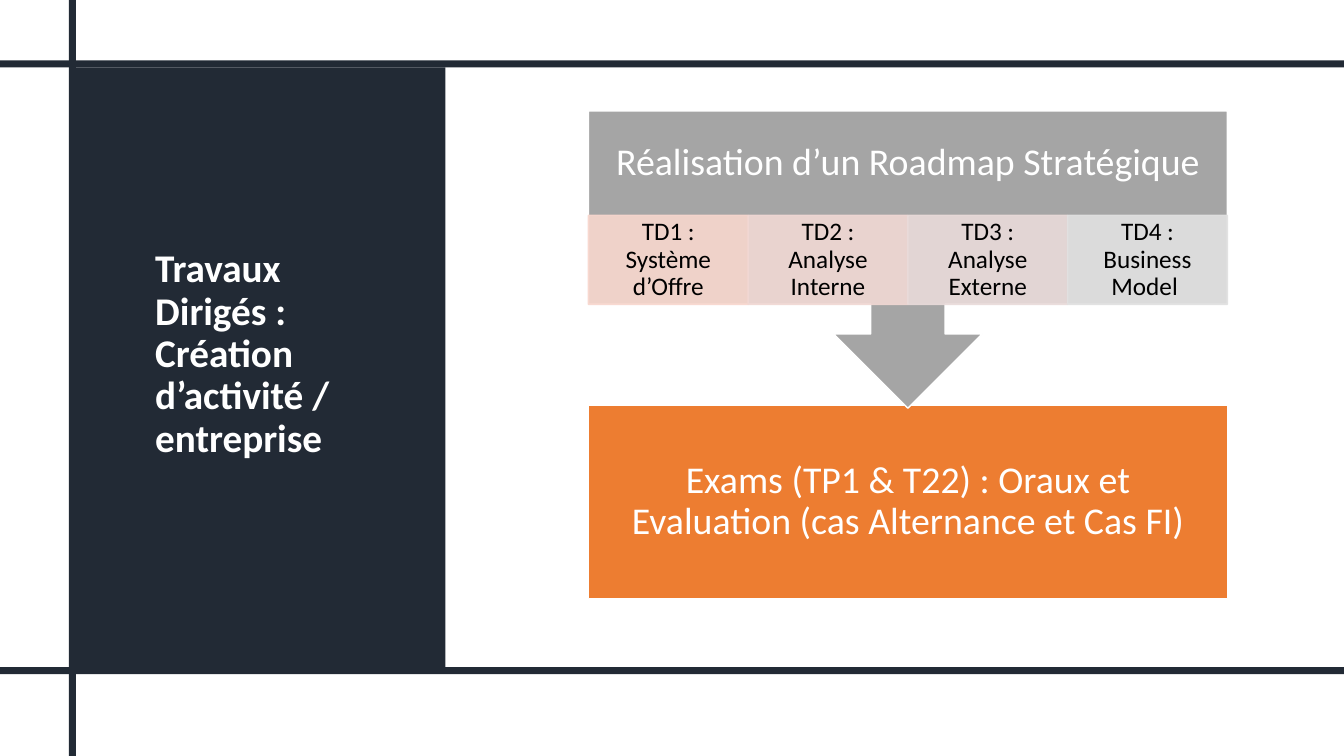
from dataclasses import dataclass
from typing import Optional

from lxml.etree import SubElement
from pptx import Presentation
from pptx.dml.color import RGBColor
from pptx.enum.shapes import MSO_SHAPE as Shape
from pptx.enum.text import MSO_ANCHOR as Anchor, MSO_AUTO_SIZE as AutoSize, PP_ALIGN as Align
from pptx.oxml.ns import qn
from pptx.util import Pt

FONT = "Calibri"
NAVY, WHITE, BLACK = "222A35", "FFFFFF", "000000"
GRAY, ORANGE = "A5A5A5", "ED7D31"
SLIDE_W, SLIDE_H = 960, 540
BAR = 5
DIAGRAM_X, DIAGRAM_W = 420.3, 456.4
TD_Y, TD_H = 153.9, 63.6


@dataclass
class Box:
    x: float
    y: float
    w: float
    h: float
    fill: str
    line: Optional[str] = None
    kind: Shape = Shape.RECTANGLE
    rotation: float = 0
    alpha: Optional[int] = None


@dataclass
class Label:
    text: str
    size: float
    color: str
    bold: bool = False
    align: Align = Align.CENTER
    inset_x: float = 15
    inset_y: float = 15


def rgb(value: str) -> RGBColor:
    return RGBColor.from_string(value)


def set_alpha(sp, percent: int) -> None:
    for color in sp.element.spPr.iter(qn("a:srgbClr")):
        SubElement(color, qn("a:alpha"), val=str(percent * 1000))


def draw_box(shapes, box: Box):
    sp = shapes.add_shape(box.kind, Pt(box.x), Pt(box.y), Pt(box.w), Pt(box.h))
    sp.shadow.inherit = False
    sp.rotation = box.rotation
    sp.fill.solid()
    sp.fill.fore_color.rgb = rgb(box.fill)
    if box.line:
        sp.line.color.rgb = rgb(box.line)
        sp.line.width = Pt(1)
    else:
        sp.line.fill.background()
    if box.alpha is not None:
        set_alpha(sp, box.alpha)
    return sp


def write_label(sp, label: Label) -> None:
    tf = sp.text_frame
    tf.text = label.text
    tf.word_wrap = True
    tf.auto_size = AutoSize.NONE
    tf.vertical_anchor = Anchor.MIDDLE
    tf.margin_left = tf.margin_right = Pt(label.inset_x)
    tf.margin_top = tf.margin_bottom = Pt(label.inset_y)
    p = tf.paragraphs[0]
    p.alignment = label.align
    p.line_spacing = 0.9
    font = p.runs[0].font
    font.name = FONT
    font.size = Pt(label.size)
    font.bold = label.bold
    font.color.rgb = rgb(label.color)


def draw_title(slide) -> None:
    title = slide.shapes.title
    title.left, title.top, title.width, title.height = Pt(103.7), Pt(79.2), Pt(159.8), Pt(348.5)
    write_label(title, Label("Travaux Dirigés : Création d’activité / entreprise",
                             28, WHITE, True, Align.LEFT, 7.2, 3.6))
    slide.shapes.element.append(title.element)


def draw_frame(slide) -> None:
    draw_box(slide.shapes, Box(51.8, 48.2, 266.4, 428.4, NAVY))
    draw_title(slide)
    for bar in (Box(0, 476.6, SLIDE_W, BAR, NAVY),
                Box(49.3, 0, BAR, SLIDE_H, NAVY),
                Box(0, 43.2, SLIDE_W, BAR, NAVY)):
        draw_box(slide.shapes, bar)


def draw_diagram(shapes) -> None:
    exams = draw_box(shapes, Box(DIAGRAM_X, 289.4, DIAGRAM_W, 138.3, ORANGE, WHITE))
    write_label(exams, Label("Exams (TP1 & T22) : Oraux et Evaluation (cas Alternance et Cas FI)",
                             27, WHITE))

    draw_box(shapes, Box(DIAGRAM_X, 79.2, DIAGRAM_W, 212.4, GRAY, WHITE,
                         Shape.UP_ARROW_CALLOUT, 180))
    roadmap = shapes.add_textbox(Pt(DIAGRAM_X), Pt(79.2), Pt(DIAGRAM_W), Pt(74.7))
    write_label(roadmap, Label("Réalisation d’un Roadmap Stratégique", 27, WHITE))

    sessions = (("TD1 : Système d’Offre", "F8D7CE"), ("TD2 : Analyse Interne", "F1D8D4"),
                ("TD3 : Analyse Externe", "E9DBDA"), ("TD4 : Business Model ", "E1E1E1"))
    width = DIAGRAM_W / len(sessions)
    for i, (text, color) in enumerate(sessions):
        session = draw_box(shapes, Box(DIAGRAM_X + i * width, TD_Y, width, TD_H,
                                       color, color, alpha=90))
        write_label(session, Label(text, 18, BLACK, inset_x=10, inset_y=2))


def main() -> None:
    prs = Presentation()
    prs.slide_width, prs.slide_height = Pt(SLIDE_W), Pt(SLIDE_H)
    slide = prs.slides.add_slide(prs.slide_layouts[5])
    draw_frame(slide)
    draw_diagram(slide.shapes)
    prs.save("out.pptx")


if __name__ == "__main__":
    main()
